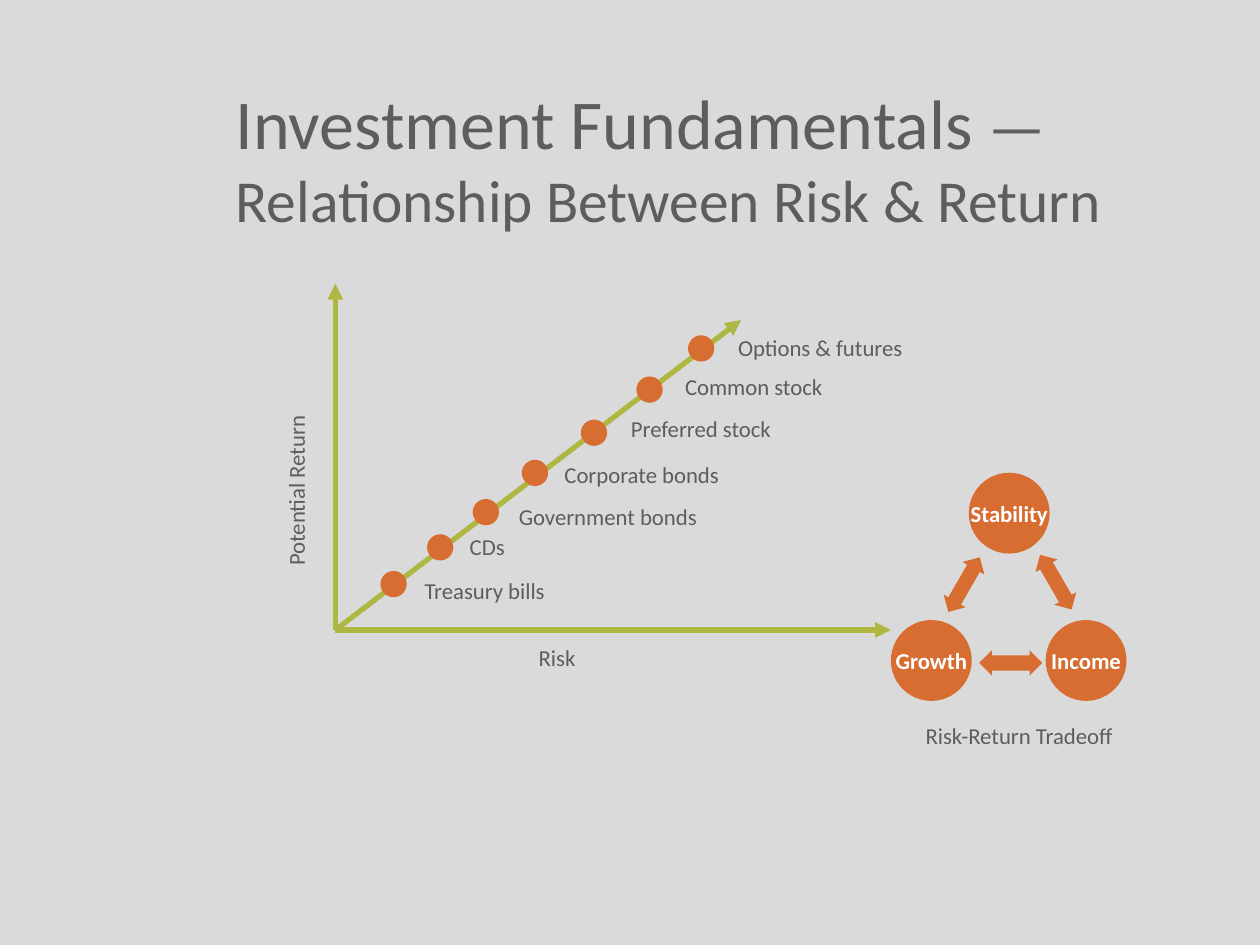
from dataclasses import dataclass

from lxml.etree import SubElement
from pptx import Presentation
from pptx.dml.color import RGBColor
from pptx.enum.shapes import MSO_CONNECTOR, MSO_SHAPE
from pptx.enum.text import MSO_ANCHOR, PP_ALIGN
from pptx.oxml.ns import qn
from pptx.shapes.autoshape import Shape
from pptx.slide import Slide
from pptx.text.text import _Paragraph
from pptx.util import Cm, Pt


@dataclass(frozen=True)
class Theme:
    """Colours, font and type sizes of the deck."""
    background: RGBColor = RGBColor(0xDA, 0xDA, 0xDA)
    text: RGBColor = RGBColor(0x5D, 0x5D, 0x5D)
    axis: RGBColor = RGBColor(0xAF, 0xB7, 0x43)
    accent: RGBColor = RGBColor(0xD7, 0x6D, 0x31)
    inverse: RGBColor = RGBColor(0xFF, 0xFF, 0xFF)
    font: str = "Calibri"
    heading: int = 40
    dash: int = 36
    line_break: int = 38
    subheading: int = 34
    label: int = 13
    axis_width: int = 3


@dataclass(frozen=True)
class Investment:
    """A point on the risk line with the place of its label, in centimetres."""
    name: str
    dot: tuple[float, float]
    label: tuple[float, float]
    label_width: float = 6.35


@dataclass(frozen=True)
class Goal:
    """A corner of the tradeoff triangle, in centimetres."""
    name: str
    left: float
    top: float


@dataclass(frozen=True)
class TradeoffArrow:
    """A double arrow between two goals, in centimetres and degrees."""
    left: float
    top: float
    rotation: float
    head: float


THEME = Theme()
ORIGIN = (6.76, 12.7)
AXIS_ENDS = [(17.96, 12.7), (6.76, 5.72), (14.94, 6.45)]
DOT_SIZE = 0.53
GOAL_SIZE = 1.63
ARROW_SIZE = (0.51, 1.27)
LABEL_HEIGHT = 0.81
INVESTMENTS = [
    Investment("Treasury bills", (7.67, 11.51), (8.31, 11.51)),
    Investment("CDs", (8.61, 10.77), (9.22, 10.62), 2.39),
    Investment("Government bonds", (9.53, 10.06), (10.21, 10.01)),
    Investment("Corporate bonds", (10.52, 9.27), (11.13, 9.17)),
    Investment("Preferred stock", (11.71, 8.46), (12.47, 8.23)),
    Investment("Common stock", (12.83, 7.59), (13.56, 7.39)),
    Investment("Options & futures", (13.87, 6.76), (14.63, 6.6)),
]
GOALS = [
    Goal("Stability", 19.53, 9.53),
    Goal("Growth", 17.96, 12.5),
    Goal("Income", 21.08, 12.5),
]
TRADEOFF_ARROWS = [
    TradeoffArrow(20.12, 12.73, 90, 0.6),
    TradeoffArrow(21.03, 11.1, 150, 0.58),
    TradeoffArrow(19.18, 11.15, 210, 0.58),
]


def add_span(para: _Paragraph, text: str, size: int, color: RGBColor, bold: bool = False) -> None:
    """Add one formatted run to a paragraph."""
    span = para.add_run()
    span.text = text
    span.font.name = THEME.font
    span.font.size = Pt(size)
    span.font.bold = bold
    span.font.color.rgb = color


def add_title(page: Slide) -> None:
    """Place the title placeholder and write its two lines."""
    title = page.shapes.title
    title.left, title.top, title.width, title.height = Cm(4.5), Cm(1.47), Cm(20.32), Cm(3.38)
    title.text_frame.vertical_anchor = MSO_ANCHOR.MIDDLE
    para = title.text_frame.paragraphs[0]
    para.alignment = PP_ALIGN.LEFT
    add_span(para, "Investment Fundamentals ", THEME.heading, THEME.text)
    add_span(para, "—", THEME.dash, THEME.text)
    add_span(para, " ", THEME.line_break, THEME.text, bold=True)
    para.runs[-1].font.italic = True
    para.add_line_break()
    add_span(para, "Relationship Between Risk & Return", THEME.subheading, THEME.text)


def add_label(page: Slide, text: str, left: float, top: float, width: float,
              alignment: PP_ALIGN = PP_ALIGN.LEFT, rotation: float = 0) -> None:
    """Add a one-line text label."""
    box = page.shapes.add_textbox(Cm(left), Cm(top), Cm(width), Cm(LABEL_HEIGHT))
    box.rotation = rotation
    box.text_frame.word_wrap = True
    para = box.text_frame.paragraphs[0]
    para.alignment = alignment
    add_span(para, text, THEME.label, THEME.text)


def add_axis(page: Slide, end: tuple[float, float]) -> None:
    """Draw an arrow from the chart origin to the given end."""
    axis = page.shapes.add_connector(
        MSO_CONNECTOR.STRAIGHT, *(Cm(length) for length in ORIGIN + end))
    axis.line.color.rgb = THEME.axis
    axis.line.width = Pt(THEME.axis_width)
    SubElement(axis.line._get_or_add_ln(), qn("a:tailEnd"), type="triangle")
    SubElement(axis._element.spPr, qn("a:effectLst"))


def add_solid(page: Slide, kind: MSO_SHAPE, left: float, top: float,
              width: float, height: float) -> Shape:
    """Add a shape in the accent colour without outline or shadow."""
    shape = page.shapes.add_shape(kind, Cm(left), Cm(top), Cm(width), Cm(height))
    shape.shadow.inherit = False
    shape.fill.solid()
    shape.fill.fore_color.rgb = THEME.accent
    shape.line.fill.background()
    return shape


def add_goal(page: Slide, goal: Goal) -> None:
    """Draw a goal circle with its centred name."""
    circle = add_solid(page, MSO_SHAPE.OVAL, goal.left, goal.top, GOAL_SIZE, GOAL_SIZE)
    frame = circle.text_frame
    frame.word_wrap = False
    frame.vertical_anchor = MSO_ANCHOR.MIDDLE
    para = frame.paragraphs[0]
    para.alignment = PP_ALIGN.CENTER
    add_span(para, goal.name, THEME.label, THEME.inverse, bold=True)


def add_tradeoff_arrow(page: Slide, arrow: TradeoffArrow) -> None:
    """Draw a rotated double arrow between two goals."""
    shape = add_solid(page, MSO_SHAPE.UP_DOWN_ARROW, arrow.left, arrow.top, *ARROW_SIZE)
    shape.adjustments[0] = 0.5
    shape.adjustments[1] = arrow.head
    shape.rotation = arrow.rotation


def main() -> None:
    """Build the risk and return slide."""
    deck = Presentation()
    deck.slide_width, deck.slide_height = Cm(25.4), Cm(19.05)
    page = deck.slides.add_slide(deck.slide_layouts[5])
    page.background.fill.solid()
    page.background.fill.fore_color.rgb = THEME.background
    add_title(page)
    add_label(page, "Risk", 7.52, 12.85, 7.42, PP_ALIGN.CENTER)
    add_label(page, "Potential Return", 3, 8.28, 5.94, rotation=270)
    for end in AXIS_ENDS:
        add_axis(page, end)
    for investment in INVESTMENTS:
        add_solid(page, MSO_SHAPE.OVAL, *investment.dot, DOT_SIZE, DOT_SIZE)
        add_label(page, investment.name, *investment.label, investment.label_width)
    for goal in GOALS:
        add_goal(page, goal)
    for arrow in TRADEOFF_ARROWS:
        add_tradeoff_arrow(page, arrow)
    add_label(page, "Risk-Return Tradeoff", 17.2, 14.43, 6.68, PP_ALIGN.CENTER)
    deck.save("out.pptx")


if __name__ == "__main__":
    main()
